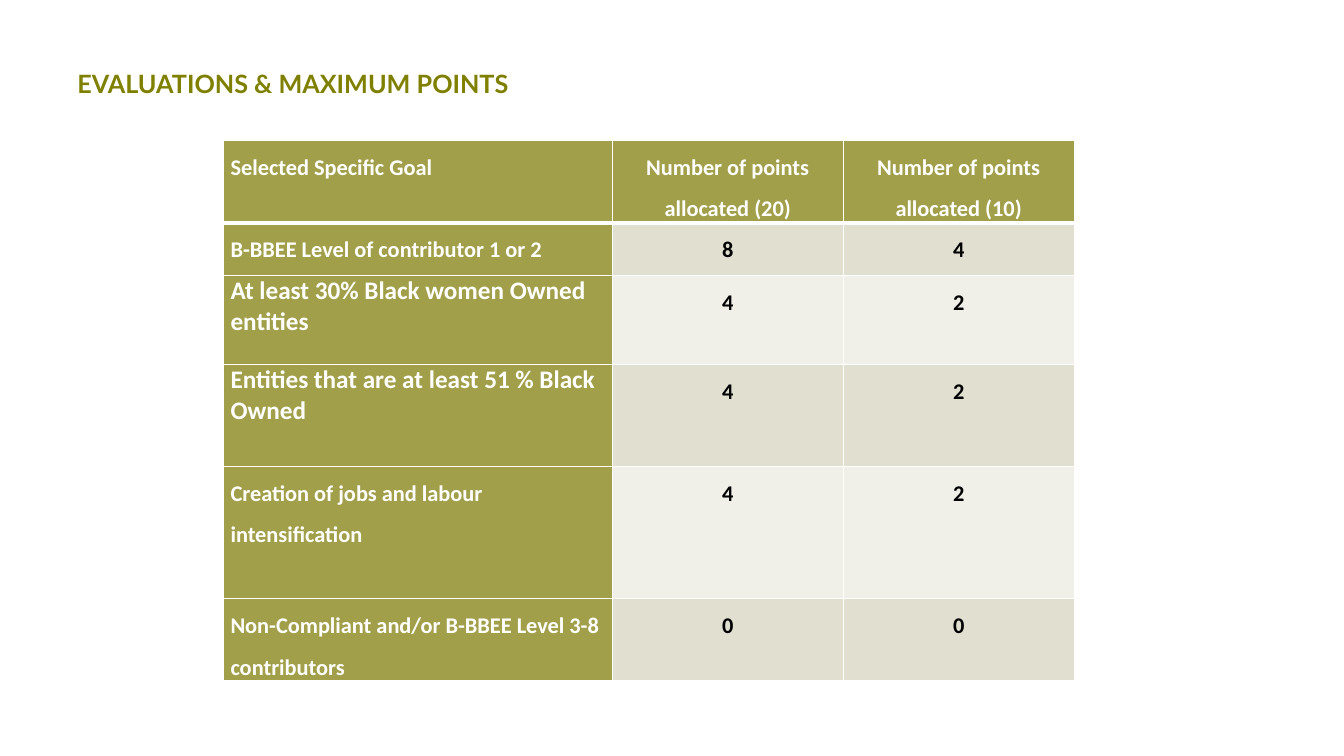
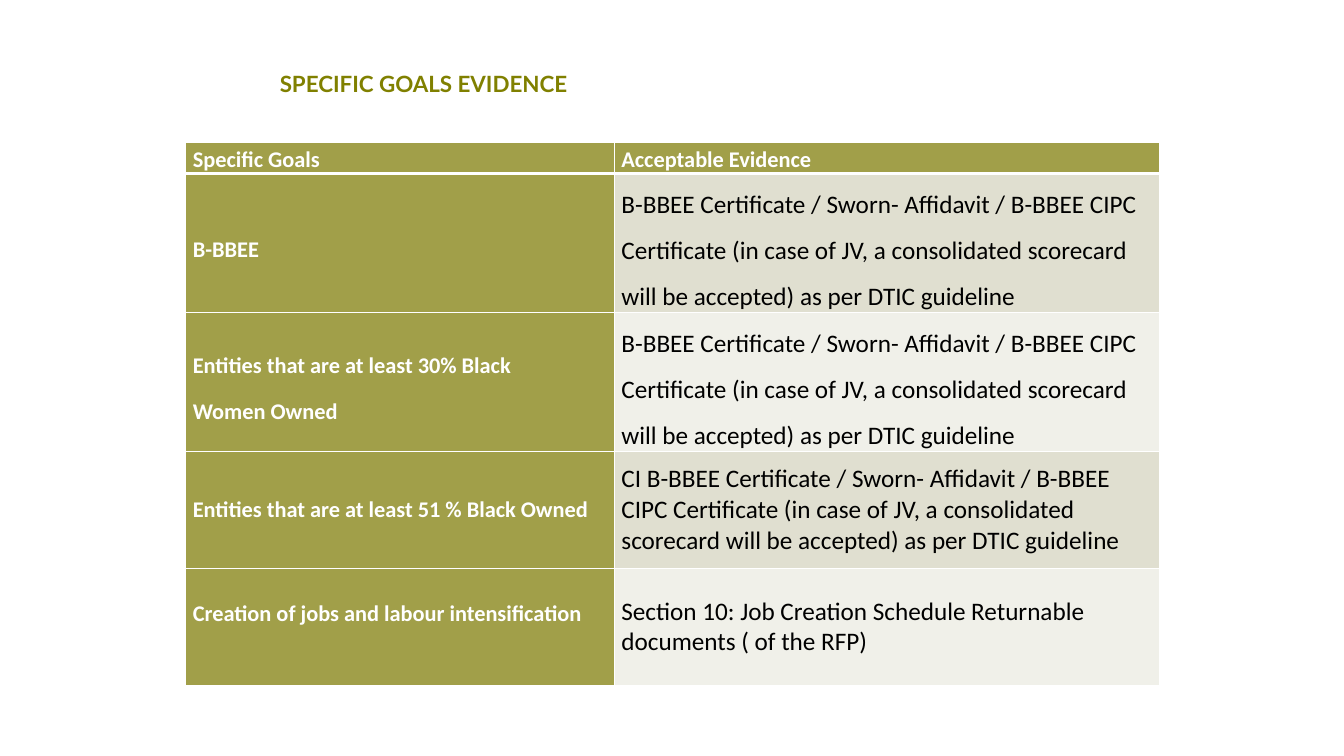
import pptx
import pptx.util
import pptx.dml.color
import pptx.enum.text
import pptx.oxml
import pptx.oxml.ns

Cm, Pt = pptx.util.Cm, pptx.util.Pt
ALIGN = pptx.enum.text.PP_ALIGN
ANCHOR = pptx.enum.text.MSO_ANCHOR

COLORS = {
    "title": "808000",
    "olive": "A19F49",
    "band_dark": "E0DFD0",
    "band_light": "F0F0E9",
    "white": "FFFFFF",
    "black": "000000",
}
TITLE_FONT, TABLE_FONT = "Lato", "Calibri"
TITLE_BOX = Cm(1.7), Cm(1.22), Cm(25.45), Cm(1.78)

CERTIFICATE = ("B-BBEE Certificate / Sworn- Affidavit / B-BBEE CIPC Certificate "
               "(in case of JV, a consolidated scorecard will be accepted) "
               "as per DTIC guideline")

# label, label size, label line spacing, points out of 20, points out of 10
POINTS = [
    ("B-BBEE Level of contributor 1 or 2", 16, 1.5, 8, 4),
    ("At least 30% Black women Owned entities", 18, 1, 4, 2),
    ("Entities that are at least 51 % Black Owned", 18, 1, 4, 2),
    ("Creation of jobs and labour intensification", 16, 1.5, 4, 2),
    ("Non-Compliant and/or B-BBEE Level 3-8 contributors", 16, 1.5, 0, 0),
]

# goal, evidence, line spacing, bottom margin of the goal in cm
EVIDENCE = [
    ("B-BBEE", CERTIFICATE, 1.5, 0),
    ("Entities that are at least 30% Black\nWomen Owned", CERTIFICATE, 1.5, 0),
    ("Entities that are at least 51 % Black Owned", "CI " + CERTIFICATE, 1, 0),
    ("Creation of jobs and labour intensification",
     "Section 10: Job Creation Schedule Returnable documents ( of the RFP)", 1, 0.66),
]


def rgb(name):
    return pptx.dml.color.RGBColor.from_string(COLORS[name])


def format_font(font, name, size, color, bold):
    font.name, font.size, font.bold = name, Pt(size), bold
    font.color.rgb = rgb(color)


def add_title_slide(prs, title, size, indent=0.25):
    s = prs.slides.add_slide(prs.slide_layouts[5])
    sp = s.shapes.title
    sp.left, sp.top, sp.width, sp.height = TITLE_BOX
    tf = sp.text_frame
    tf.text = title
    tf.word_wrap = True
    tf.vertical_anchor = ANCHOR.MIDDLE
    tf.margin_left = Cm(indent)
    p = tf.paragraphs[0]
    p.alignment = ALIGN.LEFT
    format_font(p.runs[0].font, TITLE_FONT, size, "title", True)
    return s


def set_borders(cell, bottom):
    """White cell borders, with the bottom one in its own width."""
    tc_pr = cell._tc.get_or_add_tcPr()
    for side, width in (("L", 1), ("R", 1), ("T", 1), ("B", bottom)):
        tc_pr.append(pptx.oxml.parse_xml(
            f'<a:ln{side} {pptx.oxml.ns.nsdecls("a")} w="{Pt(width)}">'
            f'<a:solidFill><a:srgbClr val="{COLORS["white"]}"/></a:solidFill>'
            f'</a:ln{side}>'))


def fill_cell(cell, text, fill, color="white", size=16, bold=True, spacing=1.5,
              align=ALIGN.LEFT, anchor=ANCHOR.TOP, border=1, bottom=0):
    set_borders(cell, border)
    cell.fill.solid()
    cell.fill.fore_color.rgb = rgb(fill)
    cell.margin_left = cell.margin_right = Cm(0.18)
    cell.margin_top, cell.margin_bottom = 0, Cm(bottom)
    cell.vertical_anchor = anchor
    tf = cell.text_frame
    tf.text = text
    for i, p in enumerate(tf.paragraphs):
        p.alignment, p.line_spacing = align, float(spacing)
        if i:
            p.space_before = Pt(3)
        for r in p.runs:
            format_font(r.font, TABLE_FONT, size, color, bold)


def add_grid(s, left, top, widths, heights):
    """Empty table whose columns and rows are given in cm."""
    table = s.shapes.add_table(len(heights), len(widths), Cm(left), Cm(top),
                               Cm(sum(widths)), Cm(sum(heights))).table
    for column, width in zip(table.columns, widths):
        column.width = Cm(width)
    for row, height in zip(table.rows, heights):
        row.height = Cm(height)
    return table


def band(row):
    return "band_dark" if row % 2 else "band_light"


def add_points_table(s, left, top):
    table = add_grid(s, left, top, [9.8, 5.82, 5.82],
                     [2.06, 1.34, 2.24, 2.57, 3.33, 2.06])
    headers = ("Selected Specific Goal", "Number of points allocated (20)",
               "Number of points allocated (10)")
    for col, text in enumerate(headers):
        fill_cell(table.cell(0, col), text, "olive", border=3,
                  align=ALIGN.CENTER if col else ALIGN.LEFT)
    for row, (label, size, spacing, *points) in enumerate(POINTS, 1):
        fill_cell(table.cell(row, 0), label, "olive", size=size, spacing=spacing)
        for col, value in enumerate(points, 1):
            fill_cell(table.cell(row, col), str(value), band(row), "black",
                      align=ALIGN.CENTER)


def add_evidence_table(s, left, top):
    table = add_grid(s, left, top, [10.8, 13.74], [0.75, 3.5, 3.5, 2.95, 2.95])
    for col, text in enumerate(("Specific Goals", "Acceptable Evidence")):
        fill_cell(table.cell(0, col), text, "olive", spacing=1.15, border=3,
                  align=ALIGN.JUSTIFY, anchor=ANCHOR.MIDDLE)
    for row, (goal, evidence, spacing, bottom) in enumerate(EVIDENCE, 1):
        fill_cell(table.cell(row, 0), goal, "olive", spacing=spacing,
                  anchor=ANCHOR.MIDDLE, bottom=bottom)
        fill_cell(table.cell(row, 1), evidence, band(row), "black", size=18,
                  bold=False, spacing=spacing, anchor=ANCHOR.MIDDLE)


def main():
    prs = pptx.Presentation()
    prs.slide_width, prs.slide_height = Cm(33.87), Cm(19.05)
    s = add_title_slide(prs, "EVALUATIONS & MAXIMUM POINTS", 18)
    add_points_table(s, 5.63, 3.54)
    s = add_title_slide(prs, "SPECIFIC GOALS EVIDENCE", 16, indent=5.35)
    add_evidence_table(s, 4.68, 3.58)
    prs.save("out.pptx")


if __name__ == "__main__":
    main()
